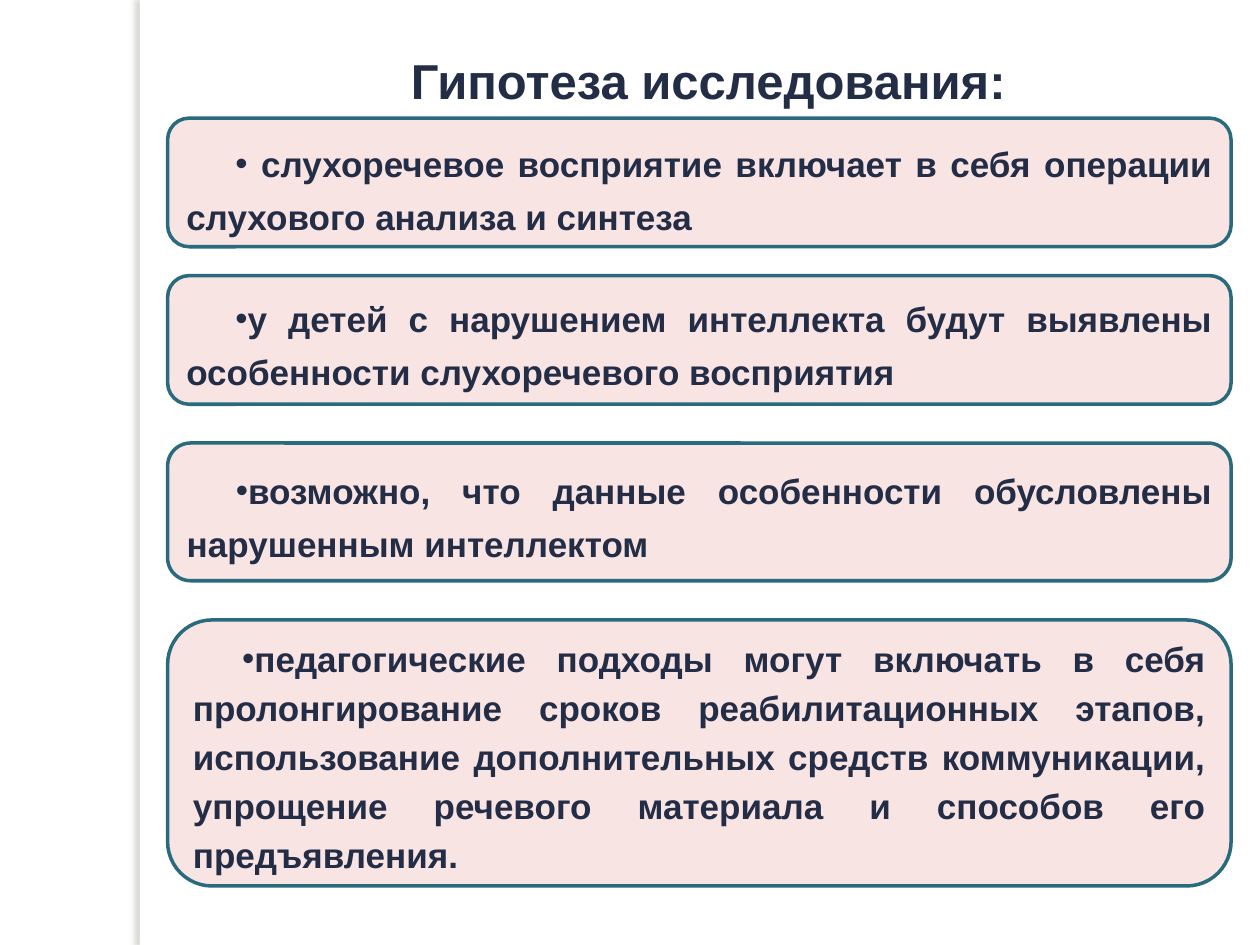
import pptx
import pptx.util
import pptx.dml.color
import pptx.enum.shapes
import pptx.enum.text
import pptx.oxml
import pptx.oxml.ns

Pt = pptx.util.Pt
ALIGN = pptx.enum.text.PP_ALIGN
MIDDLE = pptx.enum.text.MSO_ANCHOR.MIDDLE
SHAPE = pptx.enum.shapes.MSO_SHAPE

TITLE = "Гипотеза исследования: "
# text, top, height, line spacing, top inset, bottom inset
HYPOTHESES = [
    (" слухоречевое восприятие включает в себя операции слухового анализа и синтеза",
     67.5, 73.5, 30, 5.76, 2.88),
    ("у детей с нарушением интеллекта будут выявлены особенности слухоречевого восприятия",
     157.5, 73.5, 30, 2.88, 2.88),
    ("возможно, что данные особенности обусловлены нарушенным интеллектом",
     253.2, 78.7, 30, 2.88, 2.88),
    ("педагогические подходы могут включать в себя пролонгирование сроков "
     "реабилитационных этапов, использование дополнительных средств коммуникации, "
     "упрощение речевого материала и способов его предъявления.",
     354.3, 152, 28, 3.6, 3.6),
]
THEME = dict(font="Arial", ink="242D46", card="F5D3D3", card_alpha=60, edge="296B7C",
             paper="FFFFFF", shadow="736F63", title=28, body=20)
CARD_LEFT, CARD_WIDTH = 95.8, 607.7


def rgb(name):
    return pptx.dml.color.RGBColor.from_string(THEME[name])


def add_xml(parent, xml):
    """Append a DrawingML element to parent and return it."""
    ns = pptx.oxml.ns.nsdecls("a")
    tag, rest = xml.split(" ", 1)
    el = pptx.oxml.parse_xml(f"{tag} {ns} {rest}")
    parent.append(el)
    return el


def write(p, text, size, indent, **paragraph):
    for name, value in paragraph.items():
        setattr(p, name, value)
    pPr = p._p.get_or_add_pPr()
    pPr.set("marL", "0")
    pPr.set("indent", str(Pt(indent)))
    r = p.add_run()
    r.text = text
    for name, value in dict(name=THEME["font"], size=Pt(size), bold=True).items():
        setattr(r.font, name, value)
    r.font.color.rgb = rgb("ink")


def add_box(s, kind, left, top, width, height, fill):
    sp = s.shapes.add_shape(kind, Pt(left), Pt(top), Pt(width), Pt(height))
    sp.shadow.inherit = False
    sp.fill.solid()
    sp.fill.fore_color.rgb = rgb(fill)
    return sp


def add_strip(s):
    sp = add_box(s, SHAPE.RECTANGLE, 79.9, 0, 5.8, 540, "paper")
    sp.line.fill.background()
    effects = sp._element.spPr.find(pptx.oxml.ns.qn("a:effectLst"))
    add_xml(effects, f'<a:outerShdw blurRad="{Pt(3)}" dist="{Pt(3)}" dir="10800000" '
                     f'rotWithShape="0"><a:srgbClr val="{THEME["shadow"]}">'
                     '<a:alpha val="25000"/></a:srgbClr></a:outerShdw>')


def add_title(s):
    sp = s.shapes.title
    for name, value in dict(left=78.5, top=11.5, width=624.2, height=51.8).items():
        setattr(sp, name, Pt(value))
    tf = sp.text_frame
    for name, value in dict(word_wrap=True, vertical_anchor=MIDDLE,
                            auto_size=pptx.enum.text.MSO_AUTO_SIZE.SHAPE_TO_FIT_TEXT).items():
        setattr(tf, name, value)
    write(tf.paragraphs[0], TITLE, THEME["title"], 36,
          alignment=ALIGN.CENTER, line_spacing=1.5)


def add_card(s, text, top, height, spacing, inset_top, inset_bottom):
    sp = add_box(s, SHAPE.ROUNDED_RECTANGLE, CARD_LEFT, top, CARD_WIDTH, height, "card")
    color = sp._element.spPr.find(pptx.oxml.ns.qn("a:solidFill"))[0]
    add_xml(color, f'<a:alpha val="{THEME["card_alpha"] * 1000}"/>')
    sp.line.color.rgb = rgb("edge")
    sp.line.width = Pt(2)
    tf = sp.text_frame
    for name, value in dict(word_wrap=True, vertical_anchor=MIDDLE,
                            margin_left=Pt(7.2), margin_right=Pt(7.2),
                            margin_top=Pt(inset_top), margin_bottom=Pt(inset_bottom)).items():
        setattr(tf, name, value)
    p = tf.paragraphs[0]
    write(p, text, THEME["body"], 28.1, alignment=ALIGN.JUSTIFY, line_spacing=Pt(spacing))
    pPr = p._p.get_or_add_pPr()
    add_xml(pPr, f'<a:buFont typeface="{THEME["font"]}"/>')
    add_xml(pPr, '<a:buChar char="•"/>')


def main():
    prs = pptx.Presentation()
    prs.slide_width, prs.slide_height = Pt(720), Pt(540)
    s = prs.slides.add_slide(prs.slide_layouts[5])
    s.background.fill.solid()
    s.background.fill.fore_color.rgb = rgb("paper")
    add_strip(s)
    add_title(s)
    for card in HYPOTHESES:
        add_card(s, *card)
    prs.save("out.pptx")


if __name__ == "__main__":
    main()
